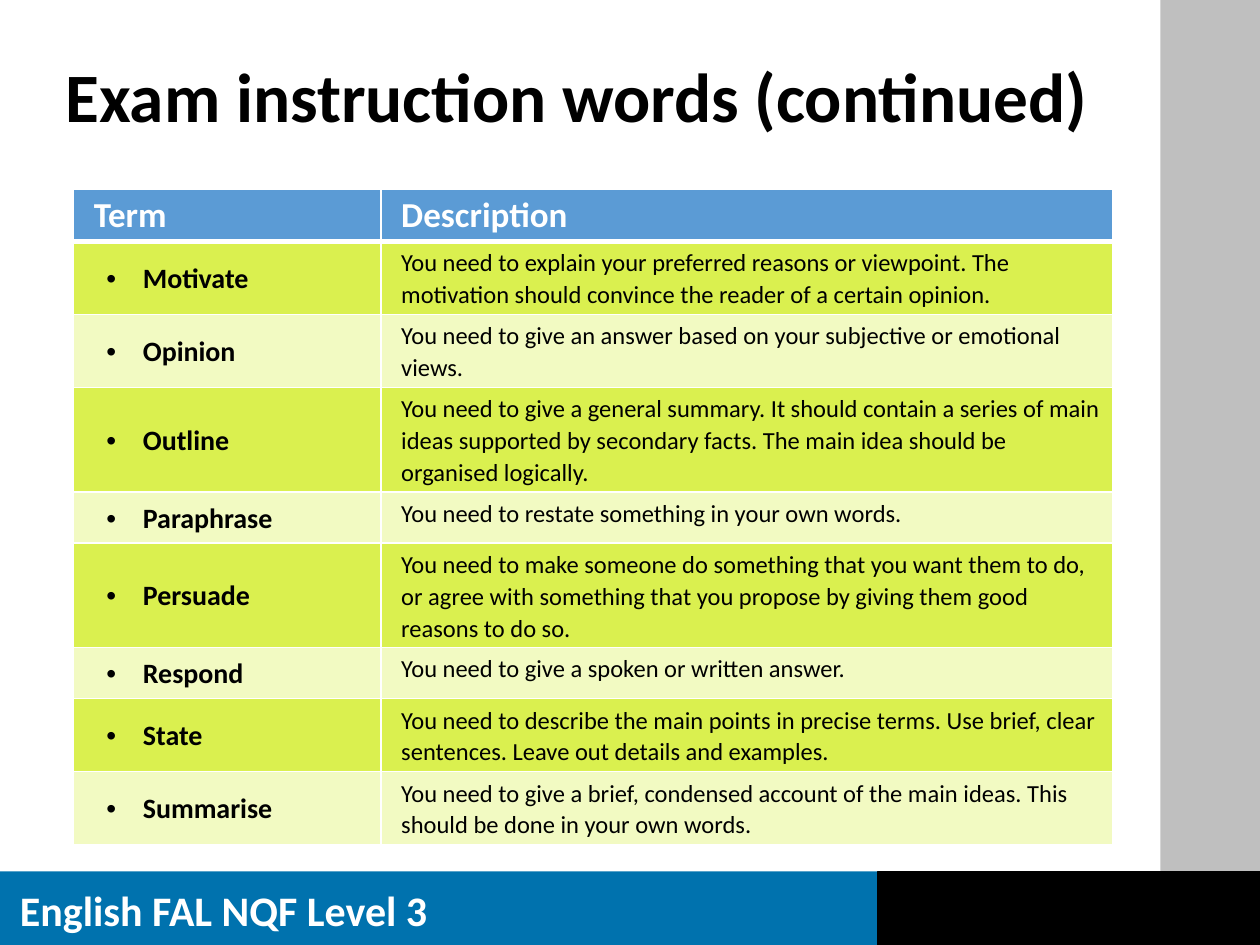
from dataclasses import dataclass

from lxml import etree
from pptx import Presentation
from pptx.dml.color import RGBColor
from pptx.enum.shapes import MSO_SHAPE
from pptx.enum.text import MSO_ANCHOR, MSO_AUTO_SIZE, PP_ALIGN
from pptx.oxml.ns import qn
from pptx.util import Pt

RECT = MSO_SHAPE.RECTANGLE
MIDDLE = MSO_ANCHOR.MIDDLE
TOP = MSO_ANCHOR.TOP
LEFT = PP_ALIGN.LEFT
FIXED = MSO_AUTO_SIZE.NONE


@dataclass(frozen=True)
class Theme:
    font: str = "Calibri"
    black: str = "000000"
    white: str = "FFFFFF"
    gray: str = "BFBFBF"
    blue: str = "0072AE"
    head: str = "5B9BD5"
    lime: str = "DAF04F"
    pale: str = "F2FAC2"
    title: float = 39.6
    foot: float = 24
    label: float = 20
    term: float = 16
    body: float = 14


THEME = Theme()
ROWS = [
    ("Motivate", "You need to explain your preferred reasons or viewpoint. "
     "The motivation should convince the reader of a certain opinion."),
    ("Opinion", "You need to give an answer based on your subjective or "
     "emotional views."),
    ("Outline", "You need to give a general summary. It should contain a "
     "series of main ideas supported by secondary facts. The main idea "
     "should be organised logically."),
    ("Paraphrase", "You need to restate something in your own words."),
    ("Persuade", "You need to make someone do something that you want them "
     "to do, or agree with something that you propose by giving them good "
     "reasons to do so."),
    ("Respond", "You need to give a spoken or written answer."),
    ("State", "You need to describe the main points in precise terms. Use "
     "brief, clear sentences. Leave out details and examples."),
    ("Summarise", "You need to give a brief, condensed account of the main "
     "ideas. This should be done in your own words."),
]


def style(para, size, color, bold=True):
    para.alignment = LEFT
    for run in para.runs:
        font = run.font
        font.name = THEME.font
        font.size = Pt(size)
        font.bold = bold
        font.color.rgb = RGBColor.from_string(color)


def add_bar(slide, box, color):
    bar = slide.shapes.add_shape(RECT, *map(Pt, box))
    bar.shadow.inherit = False
    bar.fill.solid()
    bar.fill.fore_color.rgb = RGBColor.from_string(color)
    bar.line.fill.background()
    return bar


def add_foot(slide):
    box = slide.shapes.add_textbox(Pt(4.3), Pt(501.8), Pt(270), Pt(36))
    frame = box.text_frame
    frame.word_wrap = True
    frame.text = "English FAL NQF Level 3"
    style(frame.paragraphs[0], THEME.foot, THEME.white)


def set_title(slide):
    title = slide.shapes.title
    title.left, title.top = Pt(30.2), Pt(28.8)
    title.width, title.height = Pt(622.8), Pt(56.9)
    frame = title.text_frame
    frame.text = "Exam instruction words (continued)"
    frame.auto_size = FIXED
    frame.vertical_anchor = MIDDLE
    para = frame.paragraphs[0]
    para.line_spacing = 0.9
    style(para, THEME.title, THEME.black)


def add_edges(cell, top=1, bottom=1):
    props = cell._tc.get_or_add_tcPr()
    for side, width in (("L", 1), ("R", 1), ("T", top), ("B", bottom)):
        line = etree.SubElement(props, qn("a:ln" + side), w=str(Pt(width)))
        fill = etree.SubElement(line, qn("a:solidFill"))
        etree.SubElement(fill, qn("a:srgbClr"), val=THEME.white)


def fill_cell(cell, text, color, insets, anchor=TOP):
    cell.fill.solid()
    cell.fill.fore_color.rgb = RGBColor.from_string(color)
    (cell.margin_left, cell.margin_top,
     cell.margin_right, cell.margin_bottom) = map(Pt, insets)
    cell.vertical_anchor = anchor
    cell.text_frame.text = text
    return cell.text_frame.paragraphs[0]


def add_bullet(para):
    props = para._p.get_or_add_pPr()
    props.set("marL", str(Pt(34.6)))
    props.set("indent", str(Pt(-20.9)))
    etree.SubElement(props, qn("a:buFont"), typeface="Arial")
    etree.SubElement(props, qn("a:buChar"), char="•")


def add_terms(slide):
    count = len(ROWS) + 1
    high = 29.2
    frame = slide.shapes.add_table(
        count, 2, Pt(42.1), Pt(108), Pt(594), Pt(high * count))
    table = frame.table
    for col, width in zip(table.columns, (175.7, 418.3)):
        col.width = Pt(width)
    for row in table.rows:
        row.height = Pt(high)

    for col, text in enumerate(("Term", "Description")):
        cell = table.cell(0, col)
        add_edges(cell, bottom=3)
        para = fill_cell(cell, text, THEME.head, (11.5, 2.9, 0, 2.9))
        style(para, THEME.label, THEME.white)

    for row, (term, text) in enumerate(ROWS, 1):
        color = THEME.lime if row % 2 else THEME.pale
        left, right = table.cell(row, 0), table.cell(row, 1)
        for cell in (left, right):
            add_edges(cell, top=3 if row == 1 else 1)
        name = fill_cell(left, term, color, (5, 0, 5, 0), MIDDLE)
        add_bullet(name)
        note = fill_cell(right, text, color, (11.5, 2.9, 5.8, 2.9))
        name.line_spacing = note.line_spacing = 1.07
        style(name, THEME.term, THEME.black)
        style(note, THEME.body, THEME.black, False)


def main():
    deck = Presentation()
    deck.slide_width, deck.slide_height = Pt(720), Pt(540)
    slide = deck.slides.add_slide(deck.slide_layouts[5])
    add_bar(slide, (663.1, 0, 56.9, 539.3), THEME.gray)
    add_bar(slide, (0, 498, 720, 42), THEME.blue)
    block = add_bar(slide, (501.8, 498, 218.2, 42), THEME.black)
    block.line.color.rgb = RGBColor.from_string(THEME.black)
    block.line.width = Pt(1)
    add_foot(slide)
    set_title(slide)
    add_terms(slide)
    deck.save("out.pptx")


if __name__ == "__main__":
    main()
